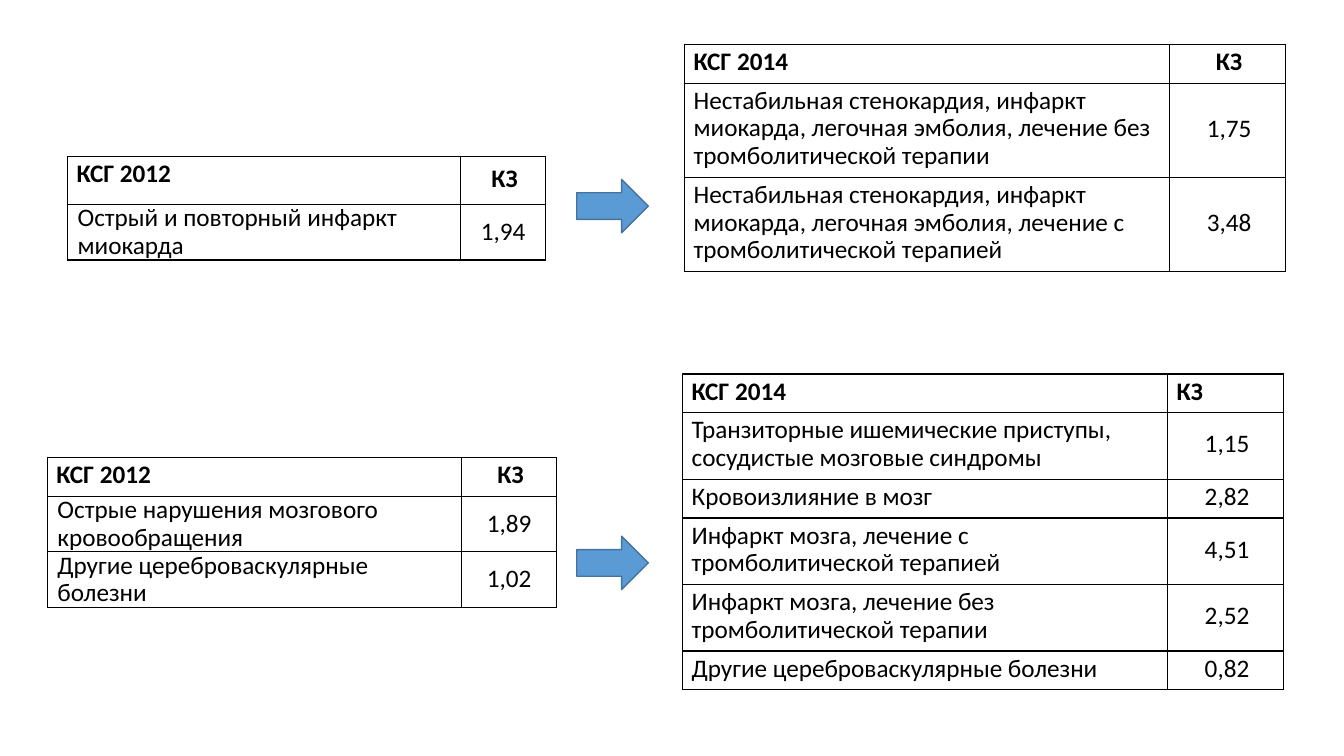
from lxml import etree
from pptx import Presentation
from pptx.dml.color import RGBColor
from pptx.enum.shapes import MSO_SHAPE
from pptx.enum.text import MSO_ANCHOR, PP_ALIGN
from pptx.oxml.ns import qn
from pptx.util import Inches, Pt

LEFT, CENTER = PP_ALIGN.LEFT, PP_ALIGN.CENTER
TOP, MIDDLE = MSO_ANCHOR.TOP, MSO_ANCHOR.MIDDLE
RIGHT_ARROW = MSO_SHAPE.RIGHT_ARROW

COLORS = {"text": "000000", "border": "000000", "arrow": "5B9BD5", "arrow_line": "43739E"}
FONT = "Calibri"
GRID = Inches(0.1)
LINE_HEIGHT = 2.7
PADDED = (0.9, 0.4, 0.6, 0.7)
TIGHT = (1, 0, 1, 0)


def grid(count):
    """Length of a number of grid steps."""
    return round(count * GRID)


def color(name):
    return RGBColor.from_string(COLORS[name])


def write_text(cell, text, bold=False, align=LEFT, anchor=TOP, margins=PADDED):
    cell.vertical_anchor = anchor
    (cell.margin_left, cell.margin_top,
     cell.margin_right, cell.margin_bottom) = map(grid, margins)
    paragraph = cell.text_frame.paragraphs[0]
    paragraph.alignment = align
    paragraph.line_spacing = 0.9
    run = paragraph.add_run()
    run.text = text
    run.font.name = FONT
    run.font.size = Pt(18)
    run.font.bold = bold
    run.font.color.rgb = color("text")


def outline_cell(cell):
    cell.fill.background()
    properties = cell._tc.get_or_add_tcPr()
    for index, side in enumerate(("lnL", "lnR", "lnT", "lnB")):
        line = etree.Element(qn(f"a:{side}"), w=str(Pt(1)))
        fill = etree.SubElement(line, qn("a:solidFill"))
        etree.SubElement(fill, qn("a:srgbClr"), val=COLORS["border"])
        properties.insert(index, line)


def add_group_table(slide, left, top, widths, year, groups, header_height=3.8,
                    body_margins=PADDED, body_anchor=TOP, header_align=CENTER):
    """Table of groups, each given as name, coefficient and number of text lines."""
    padding = body_margins[1] + body_margins[3]
    heights = [header_height] + [lines * LINE_HEIGHT + padding for *_, lines in groups]
    frame = slide.shapes.add_table(len(heights), 2, grid(left), grid(top),
                                   grid(sum(widths)), grid(sum(heights)))
    table = frame.table
    table.first_row = table.horz_banding = False
    for column, width in zip(table.columns, widths):
        column.width = grid(width)
    for row, height in zip(table.rows, heights):
        row.height = grid(height)

    write_text(table.cell(0, 0), f"КСГ {year}", bold=True)
    write_text(table.cell(0, 1), "КЗ", bold=True, align=header_align, anchor=MIDDLE)
    for index, (name, coefficient, _) in enumerate(groups, start=1):
        write_text(table.cell(index, 0), name, anchor=body_anchor, margins=body_margins)
        write_text(table.cell(index, 1), coefficient, align=CENTER, anchor=MIDDLE,
                   margins=body_margins)
    for cell in table.iter_cells():
        outline_cell(cell)


def add_arrow(slide, left, top):
    arrow = slide.shapes.add_shape(RIGHT_ARROW, grid(left), grid(top), grid(7.1), grid(5.3))
    arrow.shadow.inherit = False
    arrow.fill.solid()
    arrow.fill.fore_color.rgb = color("arrow")
    arrow.line.color.rgb = color("arrow_line")
    arrow.line.width = Pt(1)


def add_infarction_row(slide, top):
    add_group_table(slide, 6.7, top + 11.1, (39, 8.4), 2012, [
        ("Острый и повторный инфаркт миокарда", "1,94", 2),
    ], header_height=4.8, body_margins=TIGHT, body_anchor=MIDDLE)
    add_arrow(slide, 57.2, top + 13.4)
    illness = "Нестабильная стенокардия, инфаркт миокарда, легочная эмболия, лечение"
    add_group_table(slide, 67.9, top, (48.1, 11.5), 2014, [
        (f"{illness} без тромболитической терапии", "1,75", 3),
        (f"{illness} с тромболитической терапией", "3,48", 3),
    ])


def add_stroke_row(slide, top):
    add_group_table(slide, 4.7, top + 8.3, (41.1, 9.4), 2012, [
        ("Острые нарушения мозгового кровообращения", "1,89", 2),
        ("Другие цереброваскулярные болезни", "1,02", 2),
    ], body_margins=TIGHT, body_anchor=MIDDLE)
    add_arrow(slide, 57.2, top + 16.1)
    add_group_table(slide, 67.7, top, (48.1, 11.5), 2014, [
        ("Транзиторные ишемические приступы, сосудистые мозговые синдромы", "1,15", 2),
        ("Кровоизлияние в мозг", "2,82", 1),
        ("Инфаркт мозга, лечение с тромболитической терапией", "4,51", 2),
        ("Инфаркт мозга, лечение без тромболитической терапии", "2,52", 2),
        ("Другие цереброваскулярные болезни", "0,82", 1),
    ], header_align=LEFT)


def main():
    presentation = Presentation()
    presentation.slide_width = Inches(13.33)
    presentation.slide_height = Inches(7.5)
    slide = presentation.slides.add_slide(presentation.slide_layouts[6])
    add_infarction_row(slide, 4.4)
    add_stroke_row(slide, 37.1)
    presentation.save("out.pptx")


if __name__ == "__main__":
    main()
